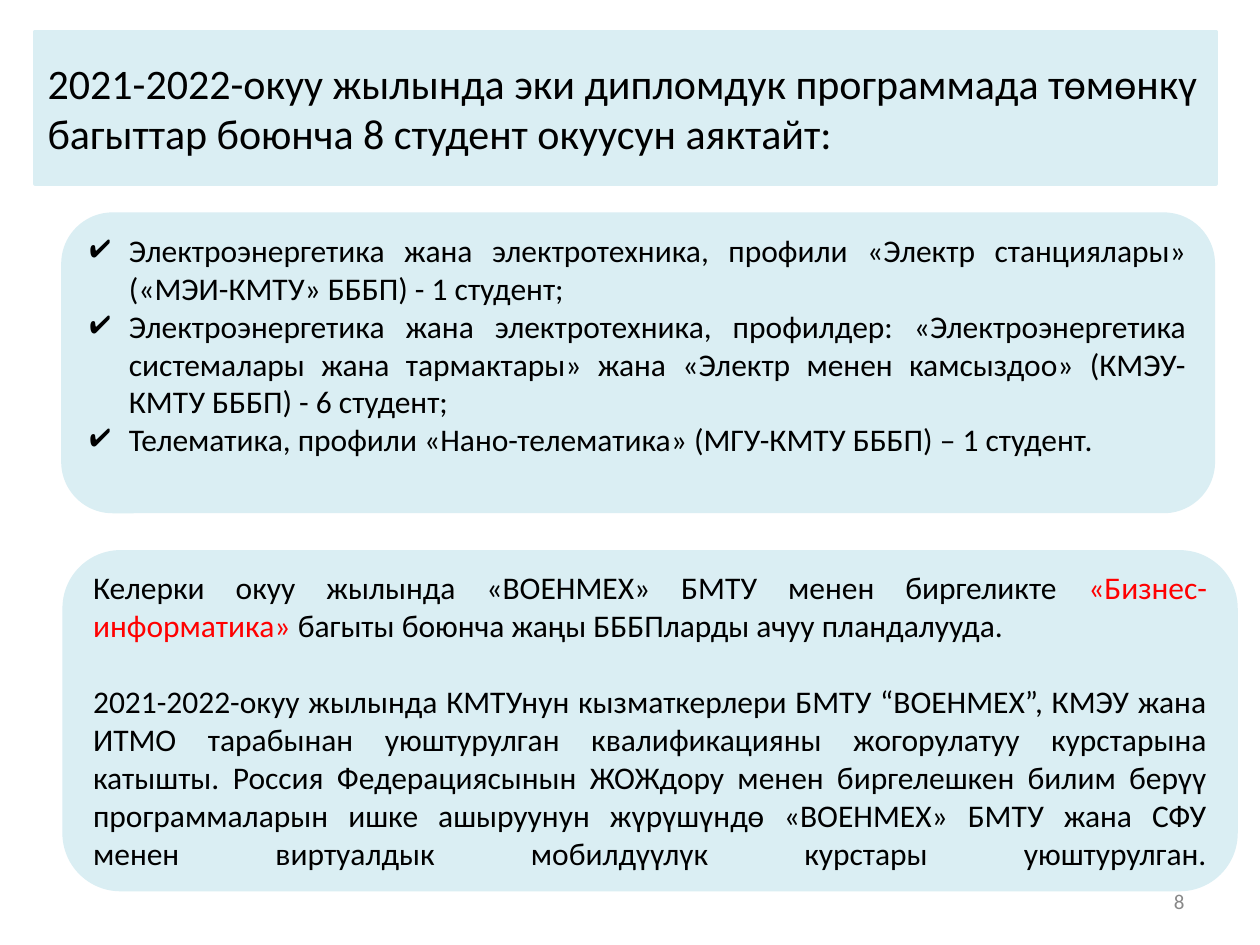
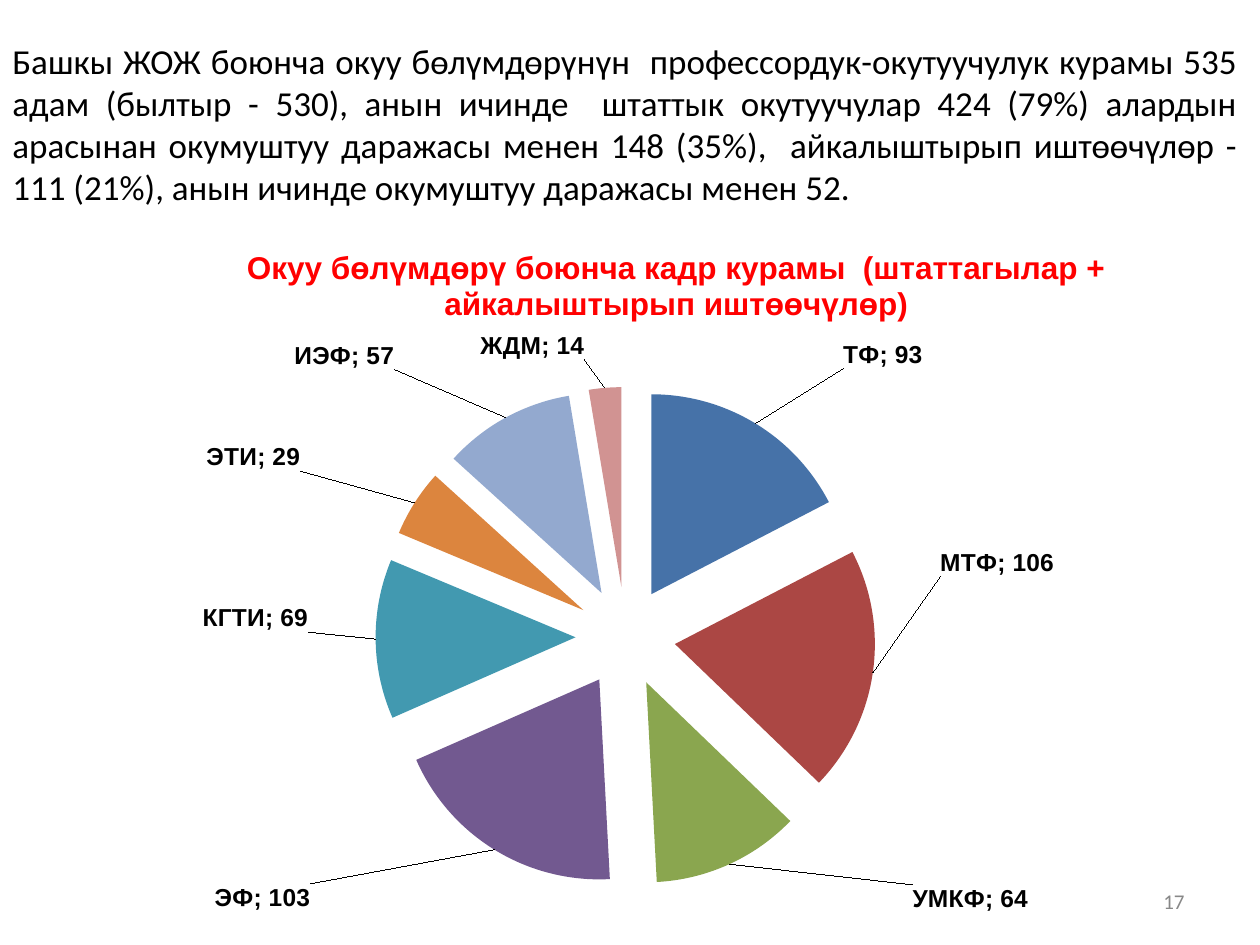
from lxml import etree
from pptx import Presentation
from pptx.chart.data import CategoryChartData
from pptx.dml.color import RGBColor
from pptx.enum import chart as charts, shapes, text
from pptx.oxml import parse_xml
from pptx.oxml.ns import nsdecls, qn
from pptx.util import Inches, Pt

# Shared look
PANEL = RGBColor(0xDA, 0xEE, 0xF3)
BLACK = RGBColor(0, 0, 0)
RED = RGBColor(0xFF, 0, 0)
GREY = RGBColor(0x88, 0x88, 0x88)
BODY_FONT, CHART_FONT = "Calibri", "Arial"
LEFT, RIGHT, JUSTIFY = (text.PP_ALIGN.LEFT, text.PP_ALIGN.RIGHT,
                        text.PP_ALIGN.JUSTIFY)
TOP, MIDDLE = text.MSO_ANCHOR.TOP, text.MSO_ANCHOR.MIDDLE
RECT = shapes.MSO_SHAPE.RECTANGLE
ROUNDED = shapes.MSO_SHAPE.ROUNDED_RECTANGLE
PAGE_NUMBER_PLACE = (7.17, 6.95, 2.33, 0.4)

# Content: a paragraph is a list of (words, colour) spans
GRADUATES_TITLE = [[("2021-2022-окуу жылында эки дипломдук программада төмөнкү "
                     "багыттар боюнча 8 студент окуусун аяктайт:", BLACK)]]
PROGRAMMES = [
    [("Электроэнергетика жана электротехника, профили «Электр станциялары» "
      "(«МЭИ-КМТУ» БББП) - 1 студент;", BLACK)],
    [("Электроэнергетика жана электротехника, профилдер: «Электроэнергетика "
      "системалары жана тармактары» жана «Электр менен камсыздоо» "
      "(КМЭУ-КМТУ БББП) - 6 студент;", BLACK)],
    [("Телематика, профили «Нано-телематика» (МГУ-КМТУ БББП) – 1 студент.",
      BLACK)],
]
PLANS = [
    [("Келерки окуу жылында «ВОЕНМЕХ» БМТУ менен биргеликте ", BLACK),
     ("«Бизнес-информатика» ", RED),
     ("багыты боюнча жаңы БББПларды ачуу пландалууда.", BLACK)],
    [("2021-2022-окуу жылында КМТУнун кызматкерлери БМТУ “ВОЕНМЕХ”, КМЭУ жана "
      "ИТМО тарабынан уюштурулган квалификацияны жогорулатуу курстарына "
      "катышты. Россия Федерациясынын ЖОЖдору менен биргелешкен билим берүү "
      "программаларын ишке ашыруунун жүрүшүндө «ВОЕНМЕХ» БМТУ жана СФУ менен "
      "виртуалдык мобилдүүлүк курстары уюштурулган.", BLACK)],
]
STAFF_TITLE = [[("Башкы ЖОЖ боюнча окуу бөлүмдөрүнүн  профессордук-окутуучулук "
                 "курамы 535 адам (былтыр - 530), анын ичинде  штаттык "
                 "окутуучулар 424 (79%) алардын арасынан окумуштуу даражасы "
                 "менен 148 (35%),  айкалыштырып иштөөчүлөр - 111 (21%), анын "
                 "ичинде окумуштуу даражасы менен 52.", BLACK)]]
CHART_TITLE = ("Окуу бөлүмдөрү боюнча кадр курамы  (штаттагылар + "
               "айкалыштырып иштөөчүлөр)")
# Faculty, staff, slice colour, label shift as a share of the chart
FACULTIES = [
    ("ТФ", 93, "4672A8", (0.07, -0.07)),
    ("МТФ", 106, "AB4744", (0.05, -0.18)),
    ("УМКФ", 64, "8AA64F", (0.15, 0.02)),
    ("ЭФ", 103, "725990", (-0.15, 0.04)),
    ("КГТИ", 69, "4299B0", (-0.05, -0.03)),
    ("ЭТИ", 29, "DC853E", (-0.09, -0.04)),
    ("ИЭФ", 57, "93A9CF", (-0.09, -0.06)),
    ("ЖДМ", 14, "D19392", (-0.06, -0.03)),
]


def write(box, paragraphs, size, align, anchor=MIDDLE):
    frame = box.text_frame
    frame.word_wrap = True
    frame.vertical_anchor = anchor
    for number, spans in enumerate(paragraphs):
        para = frame.paragraphs[0] if number == 0 else frame.add_paragraph()
        para.alignment = align
        for words, colour in spans:
            span = para.add_run()
            span.text = words
            span.font.size, span.font.name = Pt(size), BODY_FONT
            span.font.color.rgb = colour
    return frame


def add_text(page, place, *args):
    box = page.shapes.add_textbox(*map(Inches, place))
    return write(box, *args)


def add_panel(page, kind, place, *args):
    box = page.shapes.add_shape(kind, *map(Inches, place))
    box.shadow.inherit = False
    box.fill.solid()
    box.fill.fore_color.rgb = box.line.color.rgb = PANEL
    box.line.width = Pt(2)
    return write(box, *args)


def add_ticks(frame):
    for para in frame.paragraphs:
        props = para._p.get_or_add_pPr()
        props.set("marL", str(Inches(0.31)))
        props.set("indent", str(-Inches(0.31)))
        etree.SubElement(props, qn("a:buChar")).set("char", "✔")


def manual_layout(inner=False, edge=False, **values):
    target = '<c:layoutTarget val="inner"/>' if inner else ""
    modes = '<c:xMode val="edge"/><c:yMode val="edge"/>' if edge else ""
    numbers = "".join(f'<c:{key} val="{val}"/>' for key, val in values.items())
    return parse_xml(f'<c:layout {nsdecls("c")}><c:manualLayout>{target}{modes}'
                     f'{numbers}</c:manualLayout></c:layout>')


def set_font(font, size, colour):
    font.name, font.size, font.bold = CHART_FONT, Pt(size), True
    font.color.rgb = colour


def add_staff_chart(page):
    data = CategoryChartData()
    data.categories = [row[0] for row in FACULTIES]
    data.add_series("Series 1", [row[1] for row in FACULTIES])
    chart = page.shapes.add_chart(
        charts.XL_CHART_TYPE.PIE, *map(Inches, (0.2, 1.86, 9.53, 5.51)),
        data).chart
    chart.has_legend = False
    chart.font.name, chart.font.size = CHART_FONT, Pt(10)

    # Title and plot area
    title = chart.chart_title.text_frame
    title.text = CHART_TITLE
    set_font(title.paragraphs[0].runs[0].font, 18, RED)
    root = chart._chartSpace
    heading = root.find(".//" + qn("c:title"))
    area = root.find(".//" + qn("c:plotArea"))
    for owner in (heading, area):
        for old in owner.findall(qn("c:layout")):
            owner.remove(old)
    heading.find(qn("c:tx")).addnext(manual_layout(edge=True, x=0.18, y=0.01))
    area.insert(0, manual_layout(inner=True, edge=True,
                                 x=0.29, y=0.22, w=0.42, h=0.72))

    # Slices and their labels
    plot = chart.plots[0]
    plot.vary_by_categories = True
    series = plot.series[0]
    labels = series.data_labels
    labels.show_value = labels.show_category_name = True
    labels.show_percentage = False
    labels.position = charts.XL_LABEL_POSITION.OUTSIDE_END
    set_font(labels.font, 14, BLACK)
    for number, (_, _, colour, _) in enumerate(FACULTIES):
        point = series.points[number]
        point.format.fill.solid()
        point.format.fill.fore_color.rgb = RGBColor.from_string(colour)
        label = point.data_label
        set_font(label.font, 14, BLACK)
        label.position = charts.XL_LABEL_POSITION.OUTSIDE_END
    group = series._element.find(qn("c:dLbls"))
    items = group.findall(qn("c:dLbl"))
    for item, (_, _, _, (x, y)) in zip(items, FACULTIES):
        item.find(qn("c:idx")).addnext(manual_layout(x=x, y=y))
    for item in items + [group]:
        for name, shown in (("Val", 1), ("CatName", 1), ("Percent", 0),
                            ("SerName", 0), ("LegendKey", 0)):
            item.find(qn("c:show" + name)).set("val", str(shown))
        item.find(qn("c:showBubbleSize")).addnext(parse_xml(
            f'<c:separator {nsdecls("c")}>; </c:separator>'))
    series._element.find(qn("c:dPt")).addprevious(
        parse_xml(f'<c:explosion {nsdecls("c")} val="25"/>'))


def add_page(deck, number):
    page = deck.slides.add_slide(deck.slide_layouts[6])
    add_text(page, PAGE_NUMBER_PLACE, [[(number, GREY)]], 12, RIGHT)
    return page


def main():
    deck = Presentation()
    deck.slide_width, deck.slide_height = Inches(10), Inches(7.5)

    # Graduates of the double-degree programmes
    page = add_page(deck, "8")
    add_panel(page, RECT, (0.28, 0.25, 9.37, 1.21), GRADUATES_TITLE, 24, LEFT)
    frame = add_panel(page, ROUNDED, (0.5, 1.7, 9.13, 2.36), PROGRAMMES, 18,
                      JUSTIFY, TOP)
    frame.margin_top = Inches(0.02)
    add_ticks(frame)
    frame = add_panel(page, ROUNDED, (0.51, 4.38, 9.3, 2.68), PLANS, 18,
                      JUSTIFY, TOP)
    frame.margin_top = 0
    frame.paragraphs[1].space_before = Pt(22)
    frame.paragraphs[1].add_line_break()  # stretches the last line too

    # Teaching staff by faculty
    page = add_page(deck, "17")
    add_text(page, (0, 0.36, 9.92, 1.24), STAFF_TITLE, 20, JUSTIFY)
    add_staff_chart(page)

    deck.save("out.pptx")


if __name__ == "__main__":
    main()
